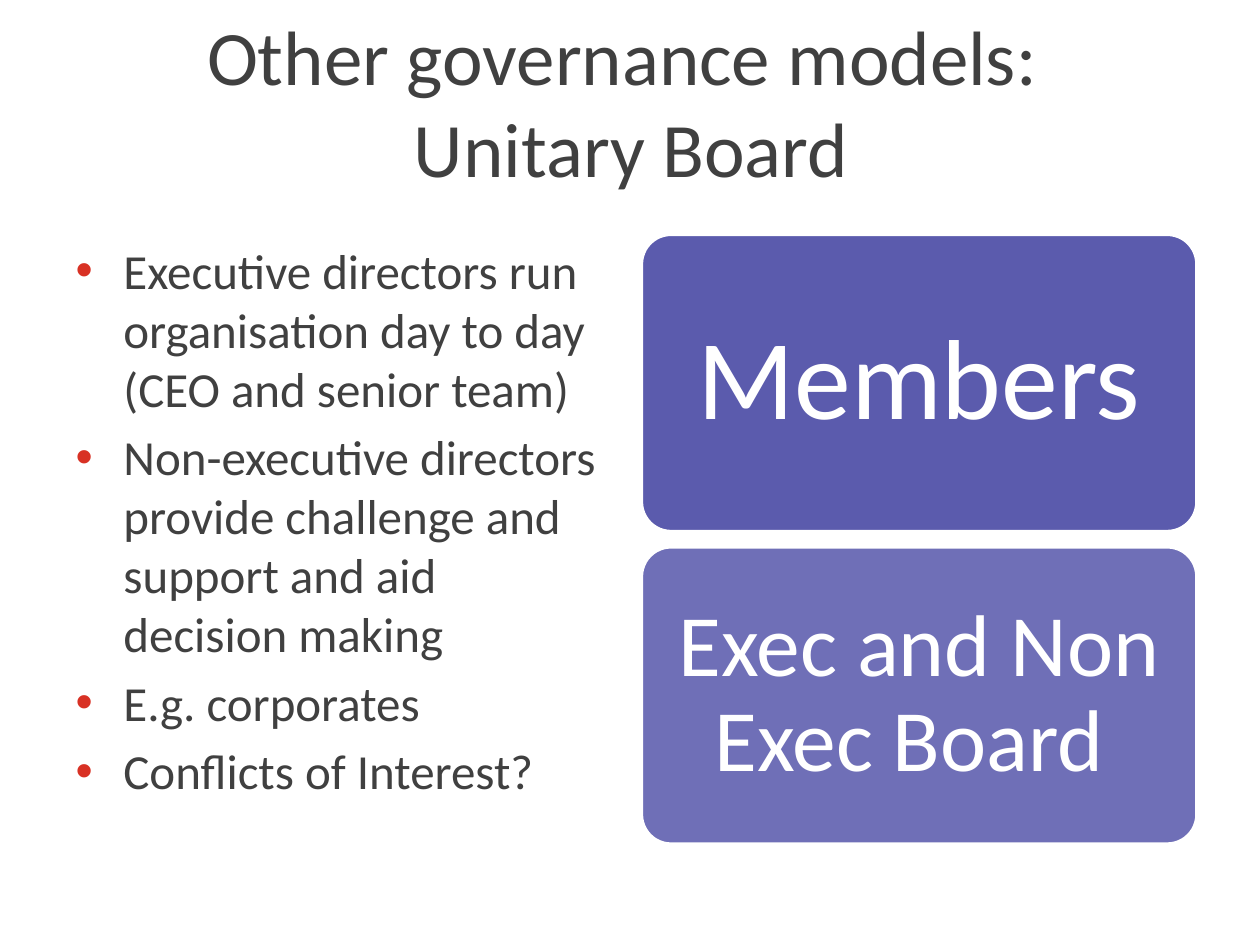
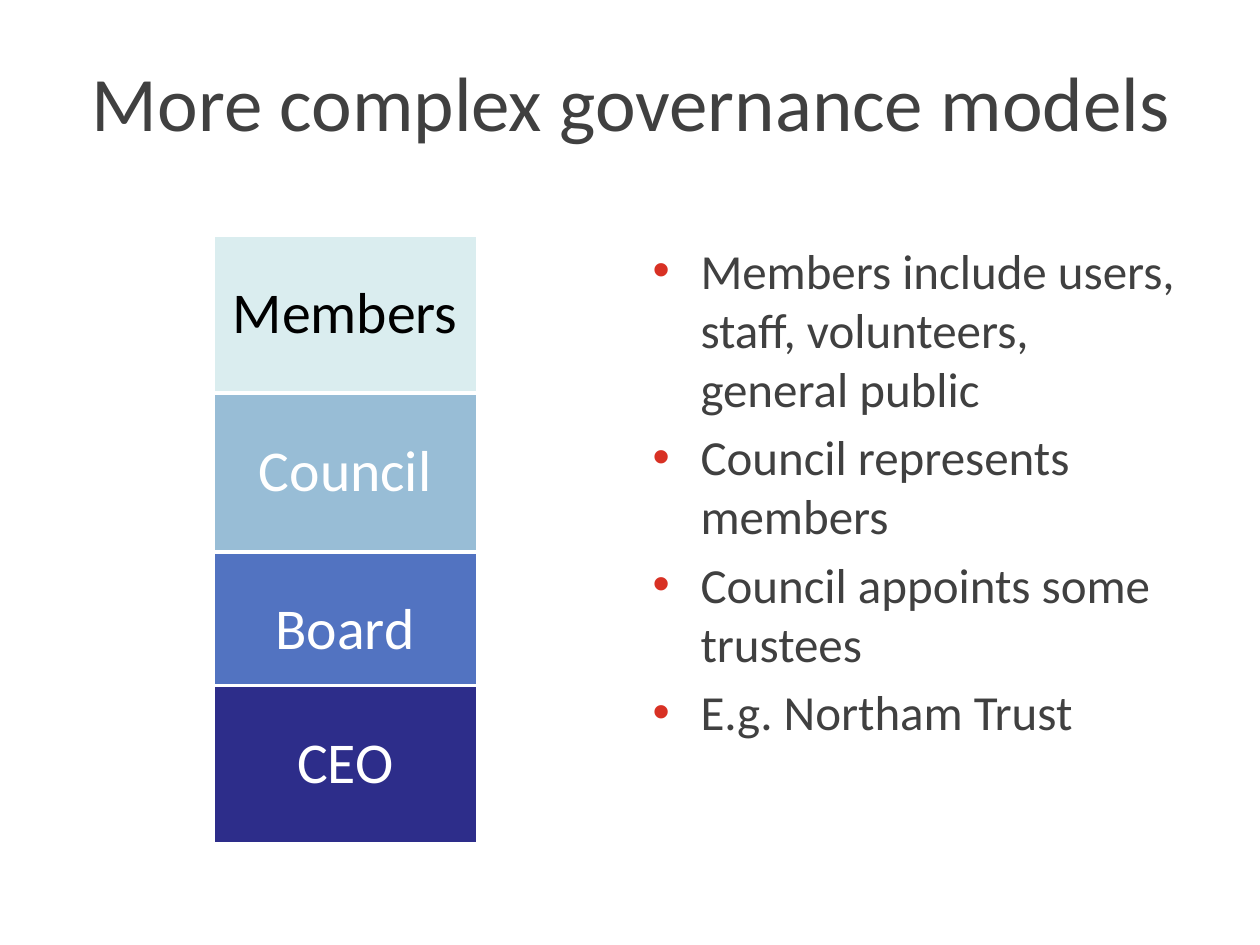
from dataclasses import dataclass

from lxml import etree
from pptx import Presentation
from pptx.dml.color import RGBColor
from pptx.enum.shapes import MSO_SHAPE
from pptx.enum.text import MSO_ANCHOR, MSO_AUTO_SIZE, PP_ALIGN
from pptx.oxml.ns import qn
from pptx.util import Inches, Pt

RECT, ROUND = MSO_SHAPE.RECTANGLE, MSO_SHAPE.ROUNDED_RECTANGLE
TOP, MIDDLE = MSO_ANCHOR.TOP, MSO_ANCHOR.MIDDLE
LEFT, CENTER = PP_ALIGN.LEFT, PP_ALIGN.CENTER
NO_FIT = MSO_AUTO_SIZE.NONE
TITLE_AND_CONTENT = 1


@dataclass(frozen=True)
class Theme:
    font: str = "Calibri"
    text: str = "404040"
    white: str = "FFFFFF"
    black: str = "000000"
    bullet: str = "D83124"
    indigo: str = "333399"
    stack: tuple = ("DAEDEF", "98BDD6", "5273C1", "2D2D8A")
    title_size: float = 44
    body_size: float = 28
    members_size: float = 65
    board_size: float = 50
    stack_size: float = 33


THEME = Theme()


def set_all(obj, formats):
    for name, value in formats.items():
        setattr(obj, name, value)


class Deck:
    """Holds the style and the current slide."""

    def __init__(self, theme):
        self.theme = theme
        self.prs = Presentation()
        self.prs.slide_width, self.prs.slide_height = Inches(10), Inches(7.5)
        self.s = None

    def place(self, sp, left, top, width, height):
        set_all(sp, {"left": Inches(left), "top": Inches(top),
                     "width": Inches(width), "height": Inches(height)})

    def fill_text(self, p, text, size, color):
        p.text = text
        for r in p.runs:
            set_all(r.font, {"name": self.theme.font, "size": Pt(size)})
            r.font.color.rgb = RGBColor.from_string(color)

    def slide(self, title):
        layout = self.prs.slide_layouts[TITLE_AND_CONTENT]
        self.s = self.prs.slides.add_slide(layout)
        sp = self.s.shapes.title
        self.place(sp, 0.51, 0.13, 9, 1.34)
        tf = sp.text_frame
        set_all(tf, {"word_wrap": True, "auto_size": NO_FIT, "vertical_anchor": MIDDLE})
        p = tf.paragraphs[0]
        p.alignment = CENTER
        self.fill_text(p, title, self.theme.title_size, self.theme.text)

    def bullet(self, p):
        pPr = p._p.get_or_add_pPr()
        pPr.set("marL", str(Inches(0.38)))
        pPr.set("indent", str(-Inches(0.38)))
        color = etree.SubElement(pPr, qn("a:buClr"))
        etree.SubElement(color, qn("a:srgbClr"), val=self.theme.bullet)
        etree.SubElement(pPr, qn("a:buFont"), typeface="Arial")
        etree.SubElement(pPr, qn("a:buChar"), char="•")

    def bullets(self, left, items):
        sp = self.s.placeholders[1]
        self.place(sp, left, 1.86, 4.42, 4.84)
        tf = sp.text_frame
        set_all(tf, {"word_wrap": True, "auto_size": NO_FIT, "vertical_anchor": TOP})
        size = self.theme.body_size
        for i, item in enumerate(items):
            p = tf.add_paragraph() if i else tf.paragraphs[0]
            self.bullet(p)
            set_all(p, {"alignment": LEFT, "space_before": Pt(0.2 * size if i else 0)})
            self.fill_text(p, item, size, self.theme.text)

    def block(self, kind, box, fill, text, size, color, inset, opacity=100):
        sp = self.s.shapes.add_shape(kind, *map(Inches, box))
        sp.shadow.inherit = False
        sp.fill.solid()
        sp.fill.fore_color.rgb = RGBColor.from_string(fill)
        if opacity < 100:
            rgb = sp._element.spPr.find(qn("a:solidFill")).find(qn("a:srgbClr"))
            etree.SubElement(rgb, qn("a:alpha"), val=str(opacity * 1000))
        sp.line.color.rgb = RGBColor.from_string(self.theme.white)
        sp.line.width = Pt(2)
        if kind == ROUND:
            sp.adjustments[0] = 0.1
        tf = sp.text_frame
        set_all(tf, {"word_wrap": True, "vertical_anchor": MIDDLE})
        set_all(tf, {f"margin_{side}": Inches(inset)
                     for side in ("left", "top", "right", "bottom")})
        p = tf.paragraphs[0]
        set_all(p, {"alignment": CENTER, "line_spacing": 0.9})
        self.fill_text(p, text, size, color)


def unitary_board(deck):
    t = deck.theme
    deck.slide("Other governance models: \vUnitary Board")
    deck.bullets(0.5, [
        "Executive directors run organisation day to day (CEO and senior team)",
        "Non-executive directors provide challenge and support and aid decision making",
        "E.g. corporates",
        "Conflicts of Interest?",
    ])
    # Two tiers, the lower one lighter
    tiers = [("Members", t.members_size, 0.27, 80),
             ("Exec and Non Exec Board ", t.board_size, 0.21, 70)]
    for i, (text, size, inset, opacity) in enumerate(tiers):
        box = (5.09, 1.86 + 2.48 * i, 4.41, 2.36)
        deck.block(ROUND, box, t.indigo, text, size, t.white, inset, opacity)


def complex_models(deck):
    t = deck.theme
    deck.slide("More complex governance models")
    # Stack of levels; the last overlaps the one above
    levels = [("Members", 1.87, t.black), ("Council", 3.12, t.white),
              ("Board", 4.38, t.white), ("CEO", 5.44, t.white)]
    for (text, top, color), fill in zip(levels, t.stack):
        deck.block(RECT, (1.69, top, 2.1, 1.26), fill, text, t.stack_size, color, 0.14)
    deck.bullets(5.08, [
        "Members include users, staff, volunteers, general public",
        "Council represents members",
        "Council appoints some trustees",
        "E.g. Northam Trust",
    ])


def main():
    deck = Deck(THEME)
    unitary_board(deck)
    complex_models(deck)
    deck.prs.save("out.pptx")


if __name__ == "__main__":
    main()
